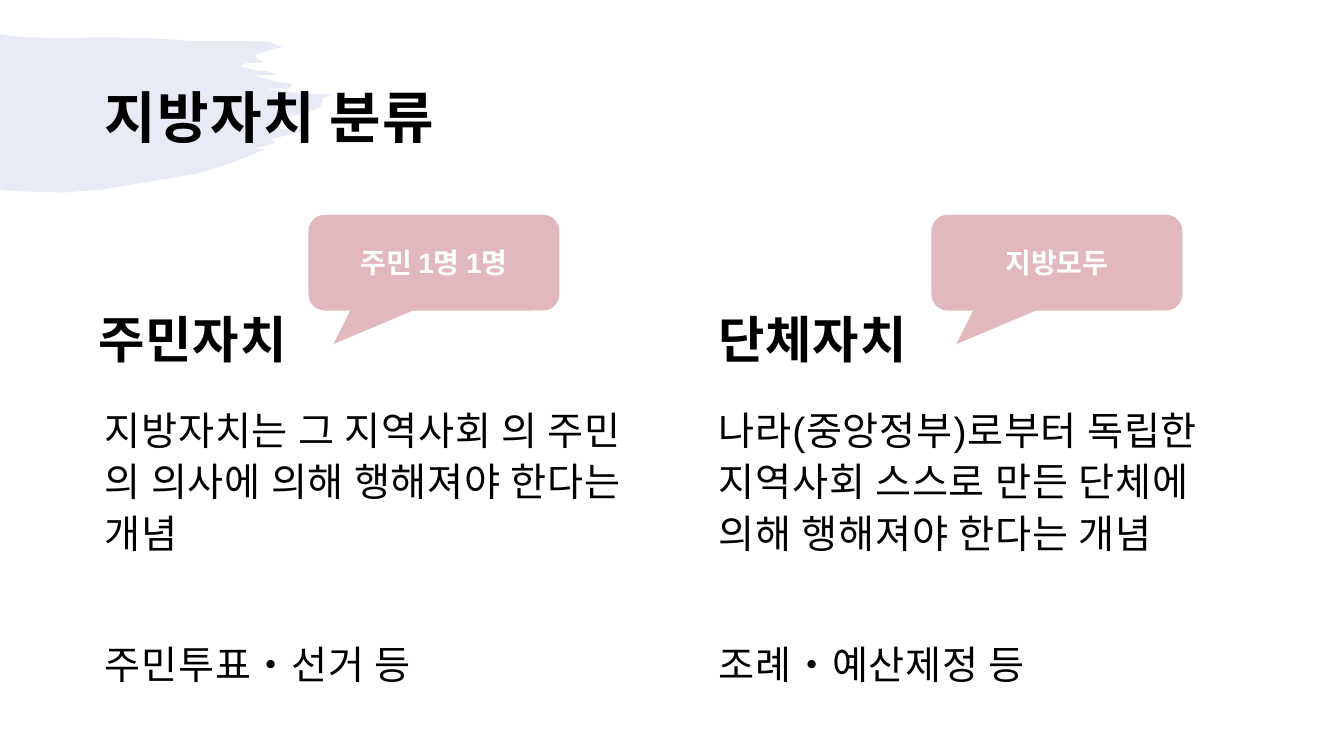
from lxml.etree import SubElement
from pptx import Presentation
from pptx.dml.color import RGBColor
from pptx.enum.shapes import MSO_SHAPE as Preset
from pptx.enum.text import MSO_ANCHOR as Anchor, PP_ALIGN as Align
from pptx.oxml.ns import qn
from pptx.util import Pt

COLORS = {"text": "000000", "label": "FFFFFF", "brush": "8C9ED1", "callout": "C77281"}
FONT = "Arial"

TITLE = "지방자치 분류"
COLUMNS = [
    {
        "heading": "주민자치", "heading_left": 61.9, "body_left": 66.2,
        "callout": "주민 1명 1명", "callout_left": 220.3,
        "body": ["지방자치는 그 지역사회 의 주민 의 의사에 의해 행해져야 한다는 개념",
                 "주민투표•선거 등"],
    },
    {
        "heading": "단체자치", "heading_left": 504.7, "body_left": 504.7,
        "callout": "지방모두", "callout_left": 665.3,
        "body": ["나라(중앙정부)로부터 독립한 지역사회 스스로 만든 단체에 의해 행해져야 한다는 개념",
                 "조례•예산제정 등"],
    },
]
BRUSH = [
    (0, 24.5), (4.3, 25.2), (18, 26.6), (47.5, 27.4), (73.4, 26.6), (108.7, 27.4),
    (139.7, 29.5), (178.6, 29.5), (192, 29.8), (201.6, 33.8), (195.1, 35.3),
    (183.6, 38.9), (182.2, 41), (184.3, 42.5), (188.6, 44.6), (176, 45.2),
    (171.4, 47.5), (177.1, 49), (184.3, 50.4), (191.5, 51.1), (198, 53.3),
    (180.7, 54), (189.4, 56.2), (196.6, 58.3), (201.6, 59), (207.4, 59.8),
    (208.8, 61.2), (206.6, 63.4), (204.5, 63.4), (189.4, 63.4), (213, 66.6),
    (237.6, 67.7), (231.1, 69.8), (229, 76.3), (221, 79.9), (216, 81.4),
    (203.8, 83.5), (201.6, 86.4), (200.2, 90), (197.3, 92.2), (221.8, 92.2),
    (193.7, 99.4), (196.6, 102.2), (181.4, 106.6), (189.4, 106.6), (168, 115.5),
    (141.8, 123.8), (73.4, 135.4), (46.8, 137.5), (16.6, 136.8), (5, 136.1), (0, 135.4),
]

COLUMN_WIDTH = 388.8
HEADING_TOP, HEADING_HEIGHT = 195.8, 74.9
BODY_TOP, BODY_HEIGHT = 277.9, 241.2
CALLOUT_TOP, CALLOUT_WIDTH, CALLOUT_HEIGHT = 153.4, 179.3, 68.4
CALLOUT_SHAPE = (-0.4, 0.85, 0.17)
GAPS = (10, 56.5)


def write(frame, lines, size, color="text", bold=False, tracking=0,
          spacing=1.0, gaps=(0,), align=Align.LEFT, anchor=Anchor.MIDDLE):
    frame.word_wrap = True
    frame.vertical_anchor = anchor
    for index, (line, gap) in enumerate(zip(lines, gaps)):
        paragraph = frame.add_paragraph() if index else frame.paragraphs[0]
        paragraph.alignment = align
        paragraph.line_spacing = spacing
        paragraph.space_before = Pt(gap)
        run = paragraph.add_run()
        run.text = line
        run.font.name = FONT
        run.font.size = Pt(size)
        run.font.bold = bold
        run.font.color.rgb = RGBColor.from_string(COLORS[color])
        if tracking:
            run._r.get_or_add_rPr().set("spc", str(int(tracking * 100)))


def add_text(left, top, width, height, lines, **style):
    frame = slide.shapes.add_textbox(Pt(left), Pt(top), Pt(width), Pt(height)).text_frame
    frame.margin_left = frame.margin_right = frame.margin_top = Pt(8.64)
    frame.margin_bottom = Pt(7.2)
    write(frame, lines, **style)


def tint(shape, color, opacity):
    shape.shadow.inherit = False
    shape.line.fill.background()
    shape.fill.solid()
    shape.fill.fore_color.rgb = RGBColor.from_string(COLORS[color])
    fill_color = shape._element.spPr.find(qn("a:solidFill"))[0]
    SubElement(fill_color, qn("a:alpha")).set("val", str(opacity * 1000))


prs = Presentation()
prs.slide_width, prs.slide_height = Pt(960), Pt(540)
slide = prs.slides.add_slide(prs.slide_layouts[6])

outline = [(Pt(x), Pt(y)) for x, y in BRUSH]
builder = slide.shapes.build_freeform(*outline[0])
builder.add_line_segments(outline[1:], close=True)
tint(builder.convert_to_shape(), "brush", 20)

add_text(66.2, 28.8, 828, 104.4, [TITLE], size=40, bold=True, tracking=1, spacing=1.05)

for column in COLUMNS:
    add_text(column["heading_left"], HEADING_TOP, COLUMN_WIDTH, HEADING_HEIGHT,
             [column["heading"]], size=36, bold=True, tracking=0.6, spacing=1.1,
             gaps=GAPS, anchor=Anchor.BOTTOM)
    add_text(column["body_left"], BODY_TOP, COLUMN_WIDTH, BODY_HEIGHT, column["body"],
             size=28, tracking=0.6, spacing=1.1, gaps=GAPS, anchor=Anchor.TOP)

for column in COLUMNS:
    callout = slide.shapes.add_shape(
        Preset.ROUNDED_RECTANGULAR_CALLOUT, Pt(column["callout_left"]), Pt(CALLOUT_TOP),
        Pt(CALLOUT_WIDTH), Pt(CALLOUT_HEIGHT))
    for index, value in enumerate(CALLOUT_SHAPE):
        callout.adjustments[index] = value
    tint(callout, "callout", 50)
    write(callout.text_frame, [column["callout"]], size=20, color="label", bold=True,
          align=Align.CENTER)

prs.save("out.pptx")
